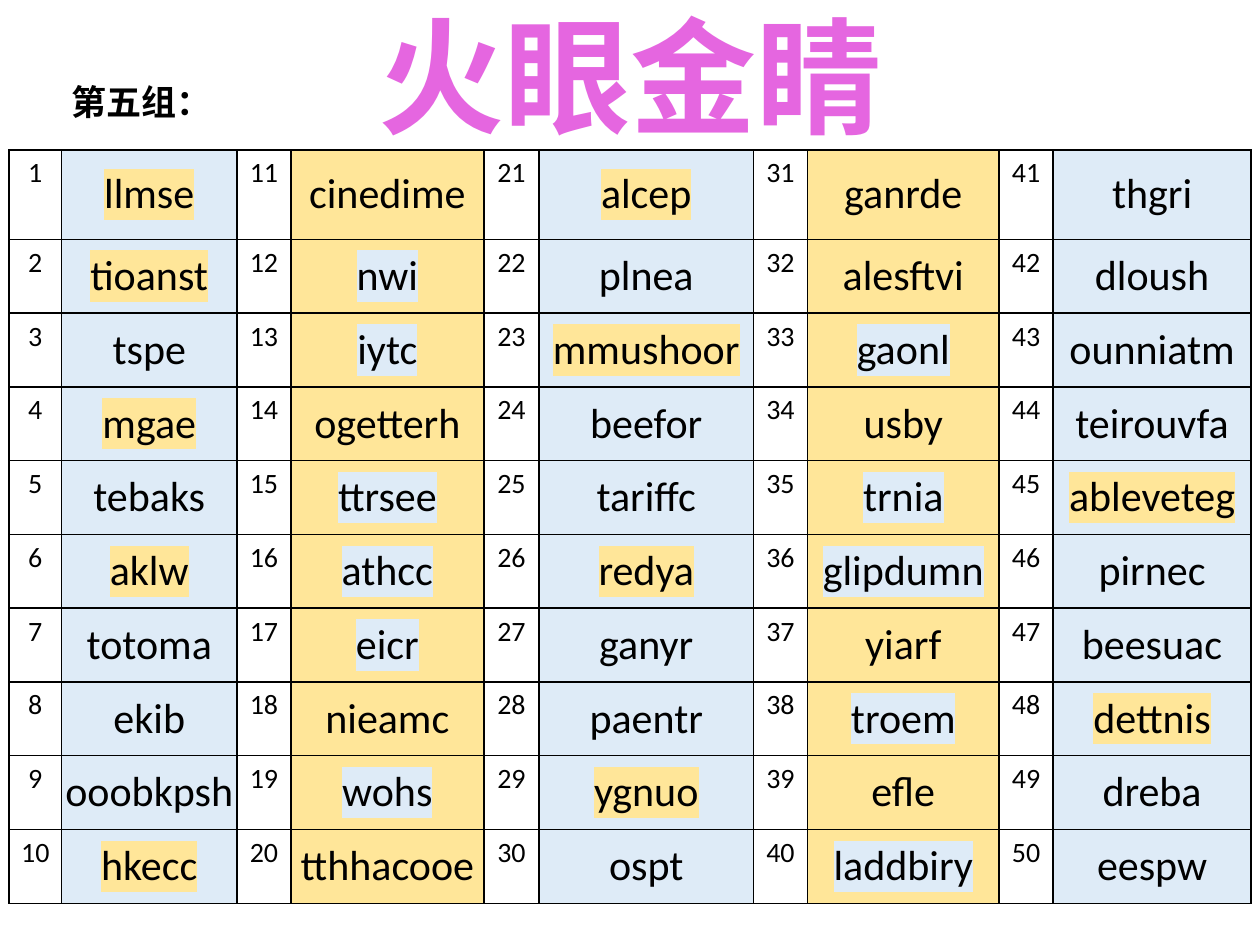
from lxml import etree
from pptx import Presentation
from pptx.dml.color import RGBColor
from pptx.enum.text import MSO_ANCHOR, MSO_AUTO_SIZE, PP_ALIGN
from pptx.oxml.ns import qn
from pptx.util import Inches, Pt

CENTER, LEFT = PP_ALIGN.CENTER, PP_ALIGN.LEFT
TOP, MIDDLE = MSO_ANCHOR.TOP, MSO_ANCHOR.MIDDLE
GROW = MSO_AUTO_SIZE.SHAPE_TO_FIT_TEXT

FONT = "Calibri"
BLACK, PINK, BLUE, YELLOW = "000000", "E566E0", "DEEBF7", "FFE699"

# Content: one list of scrambled words per column
TITLE = "火眼金睛"
TEAM = "第五组："
GROUPS = [
    ["llmse", "tioanst", "tspe", "mgae", "tebaks",
     "aklw", "totoma", "ekib", "ooobkpsh", "hkecc"],
    ["cinedime", "nwi", "iytc", "ogetterh", "ttrsee",
     "athcc", "eicr", "nieamc", "wohs", "tthhacooe"],
    ["alcep", "plnea", "mmushoor", "beefor", "tariffc",
     "redya", "ganyr", "paentr", "ygnuo", "ospt"],
    ["ganrde", "alesftvi", "gaonl", "usby", "trnia",
     "glipdumn", "yiarf", "troem", "efle", "laddbiry"],
    ["thgri", "dloush", "ounniatm", "teirouvfa", "ableveteg",
     "pirnec", "beesuac", "dettnis", "dreba", "eespw"],
]
# Words highlighted in the colour opposite to their column
MARKED = {
    "llmse", "tioanst", "mgae", "aklw", "hkecc",
    "nwi", "iytc", "ttrsee", "athcc", "eicr", "wohs",
    "alcep", "mmushoor", "redya", "ygnuo",
    "gaonl", "trnia", "glipdumn", "troem", "laddbiry",
    "ableveteg", "dettnis",
}
COL_WIDTHS = [0.42, 1.39, 0.43, 1.53, 0.44, 1.7, 0.43, 1.52, 0.43, 1.57]
TABLE_HEIGHT, FIRST_ROW = 5.98, 0.71


def rgb(color):
    return RGBColor.from_string(color)


def write(tf, text, size, color=BLACK, bold=False, align=CENTER):
    p = tf.paragraphs[0]
    p.alignment = align
    p.font.name, p.font.size, p.font.bold = FONT, Pt(size), bold
    p.font.color.rgb = rgb(color)
    r = p.add_run()
    r.text = text
    return r


def highlight(r, color):
    mark = etree.SubElement(r.font._element, qn("a:highlight"))
    etree.SubElement(mark, qn("a:srgbClr"), val=color)


def add_borders(cell):
    tc_pr = cell._tc.get_or_add_tcPr()
    for side in ("lnL", "lnR", "lnT", "lnB"):
        ln = etree.SubElement(tc_pr, qn(f"a:{side}"), w=str(Pt(1)))
        fill = etree.SubElement(ln, qn("a:solidFill"))
        etree.SubElement(fill, qn("a:srgbClr"), val=BLACK)


def fill_number(cell, number):
    add_borders(cell)
    cell.fill.background()
    cell.margin_left = cell.margin_right = Inches(0.05)
    write(cell.text_frame, str(number), 16)


def fill_word(cell, word, color, other):
    add_borders(cell)
    cell.fill.solid()
    cell.fill.fore_color.rgb = rgb(color)
    cell.vertical_anchor = MIDDLE
    cell.margin_left = cell.margin_right = 0
    cell.margin_top = cell.margin_bottom = 0
    r = write(cell.text_frame, word, 24)
    highlight(r, other if word in MARKED else color)


def main():
    prs = Presentation()
    prs.slide_width, prs.slide_height = Inches(10), Inches(7.5)
    s = prs.slides.add_slide(prs.slide_layouts[5])

    # Word table: a number column and a word column for each group
    n_rows = len(GROUPS[0])
    table = s.shapes.add_table(
        n_rows, len(COL_WIDTHS), Inches(0.07), Inches(1.19),
        Inches(sum(COL_WIDTHS)), Inches(TABLE_HEIGHT)).table
    table.first_row = table.horz_banding = False
    for col, width in zip(table.columns, COL_WIDTHS):
        col.width = Inches(width)
    for i, row in enumerate(table.rows):
        row.height = Inches((TABLE_HEIGHT - FIRST_ROW) / (n_rows - 1)
                            if i else FIRST_ROW)
    for g, words in enumerate(GROUPS):
        color, other = (YELLOW, BLUE) if g % 2 else (BLUE, YELLOW)
        for i, word in enumerate(words):
            fill_number(table.cell(i, 2 * g), g * n_rows + i + 1)
            fill_word(table.cell(i, 2 * g + 1), word, color, other)

    # Team label
    sp = s.shapes.add_textbox(Inches(0.47), Inches(0.59),
                              Inches(2.84), Inches(0.43))
    sp.text_frame.word_wrap = True
    sp.text_frame.auto_size = GROW
    write(sp.text_frame, TEAM, 20, bold=True, align=LEFT)

    # Title
    title = s.shapes.title
    title.left, title.top = Inches(2.89), Inches(-0.06)
    title.width, title.height = Inches(4.22), Inches(1.3)
    tf = title.text_frame
    tf.word_wrap = False
    tf.auto_size = GROW
    tf.vertical_anchor = TOP
    write(tf, TITLE, 72, PINK, bold=True)

    prs.save("out.pptx")


if __name__ == "__main__":
    main()
